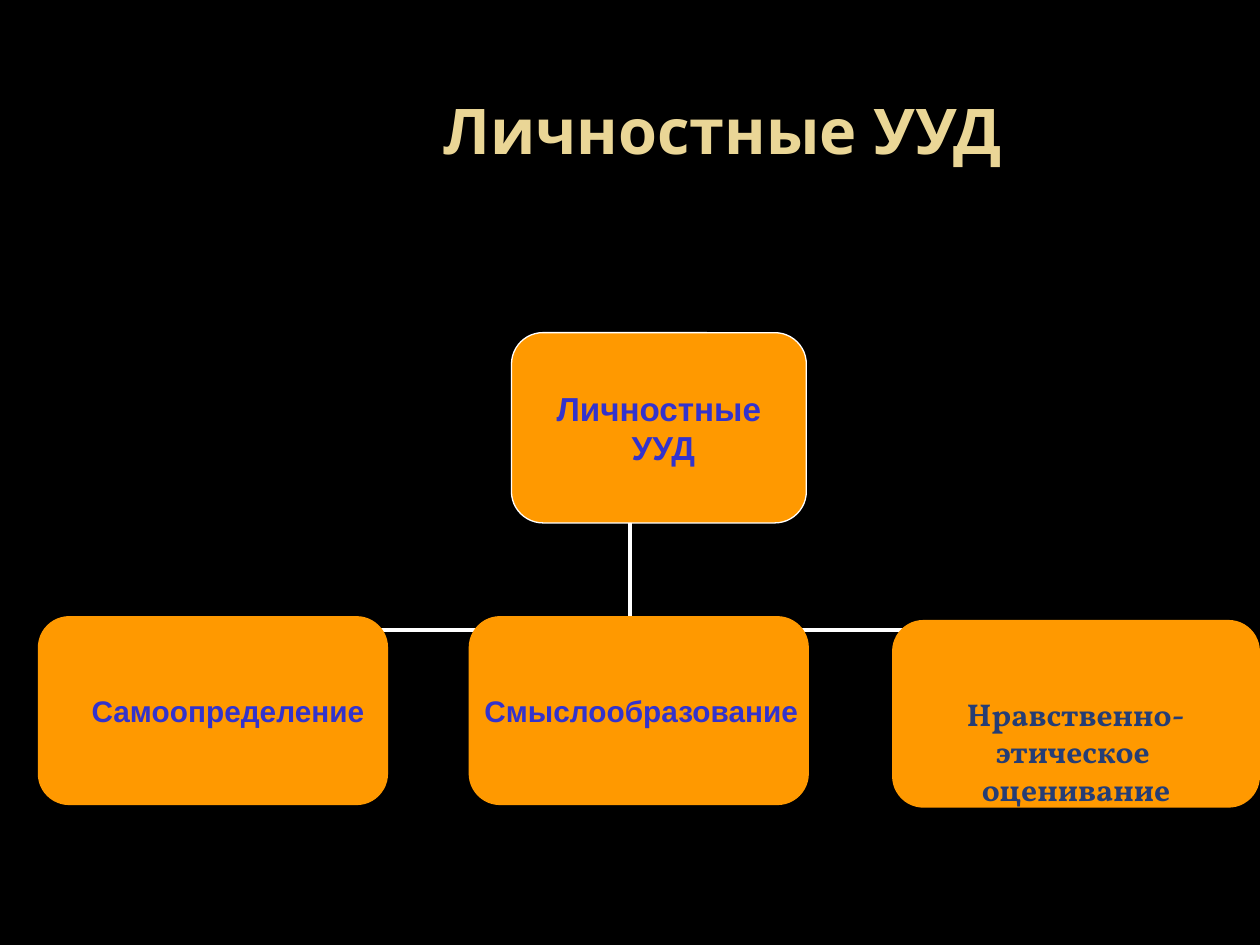
from dataclasses import dataclass

from pptx import Presentation
from pptx.dml.color import RGBColor
from pptx.enum.shapes import MSO_SHAPE
from pptx.enum.text import MSO_ANCHOR, PP_ALIGN
from pptx.util import Inches, Pt

ROUNDED = MSO_SHAPE.ROUNDED_RECTANGLE
CENTER = PP_ALIGN.CENTER
TOP = MSO_ANCHOR.TOP
MIDDLE = MSO_ANCHOR.MIDDLE
CORNER_RADIUS = 0.25
UNITS_PER_INCH = 914400


@dataclass(frozen=True)
class Theme:
    background: RGBColor = RGBColor(0, 0, 0)
    title: RGBColor = RGBColor.from_string("EAD696")
    box: RGBColor = RGBColor.from_string("FF9900")
    label: RGBColor = RGBColor.from_string("3333CC")
    dark_label: RGBColor = RGBColor.from_string("253D75")
    line: RGBColor = RGBColor(255, 255, 255)
    title_font: str = "Noto Sans"
    label_font: str = "Arial"
    serif_font: str = "Vollkorn"
    title_size: int = 36
    root_size: int = 19
    child_size: int = 17
    serif_size: int = 18
    outline_width: float = 0.75
    branch_width: float = 2.25


THEME = Theme()


def write_text(shape, lines, font, size, color, left=0, top=0, anchor=MIDDLE):
    frame = shape.text_frame
    frame.word_wrap = True
    frame.vertical_anchor = anchor
    frame.margin_left, frame.margin_top = Inches(left), Inches(top)
    frame.margin_right = frame.margin_bottom = 0
    frame.text = "\n".join(lines)
    for para in frame.paragraphs:
        para.alignment = CENTER
        para.font.name = font
        para.font.size = Pt(size)
        para.font.bold = True
        para.font.color.rgb = color


def indent_paragraph(para, indent):
    para._p.get_or_add_pPr().set("marL", str(Inches(indent)))


def add_title(page, text):
    box = page.shapes.add_textbox(Inches(0), Inches(0.25), Inches(9), Inches(1.25))
    write_text(box, [text], THEME.title_font, THEME.title_size, THEME.title,
               left=2.47, top=0.31)


def add_box(page, left, top, width, height=1.5, outlined=False):
    box = page.shapes.add_shape(
        ROUNDED, Inches(left), Inches(top), Inches(width), Inches(height))
    box.adjustments[0] = CORNER_RADIUS / height
    box.shadow.inherit = False
    box.fill.solid()
    box.fill.fore_color.rgb = THEME.box
    if outlined:
        box.line.color.rgb = THEME.line
        box.line.width = Pt(THEME.outline_width)
    else:
        box.line.fill.background()
    return box


def add_branch(page, points):
    builder = page.shapes.build_freeform(*points[0], scale=UNITS_PER_INCH)
    builder.add_line_segments(points[1:], close=True)
    branch = builder.convert_to_shape()
    branch.shadow.inherit = False
    branch.fill.background()
    branch.line.color.rgb = THEME.line
    branch.line.width = Pt(THEME.branch_width)


def add_branches(page):
    left, right = 5.22, 5.25
    top, bus_top, bus_bottom, bottom = 4.14, 4.75, 4.78, 4.89
    add_branch(page, [
        (8.67, bottom), (8.67, bus_top), (right, bus_top), (right, top),
        (left, top), (left, bus_bottom), (8.64, bus_bottom), (8.64, bottom)])
    add_branch(page, [(left, bottom), (left, top), (right, top), (right, bottom)])
    add_branch(page, [
        (1.8, bottom), (1.8, bus_top), (left, bus_top), (left, top),
        (right, top), (right, bus_bottom), (1.83, bus_bottom), (1.83, bottom)])


def main():
    deck = Presentation()
    deck.slide_width, deck.slide_height = Inches(10), Inches(7.5)
    page = deck.slides.add_slide(deck.slide_layouts[6])
    page.background.fill.solid()
    page.background.fill.fore_color.rgb = THEME.background

    add_title(page, "Личностные УУД")
    add_branches(page)
    root = add_box(page, 4.06, 2.64, 2.34, 1.51, outlined=True)
    write_text(root, ["Личностные", "УУД"], THEME.label_font,
               THEME.root_size, THEME.label)
    indent_paragraph(root.text_frame.paragraphs[1], 0.07)

    children = [
        ("Самоопределение", 0.3, 2.78, 0.24),
        ("Смыслообразование", 3.72, 2.7, 0.04),
    ]
    for label, left, width, indent in children:
        child = add_box(page, left, 4.89, width)
        write_text(child, [label], THEME.label_font, THEME.child_size,
                   THEME.label, left=indent)

    ethics = add_box(page, 7.08, 4.92, 2.92, 1.49)
    write_text(ethics, ["Нравственно-этическое ", "оценивание"], THEME.serif_font,
               THEME.serif_size, THEME.dark_label, top=0.52, anchor=TOP)

    deck.save("out.pptx")


if __name__ == "__main__":
    main()
